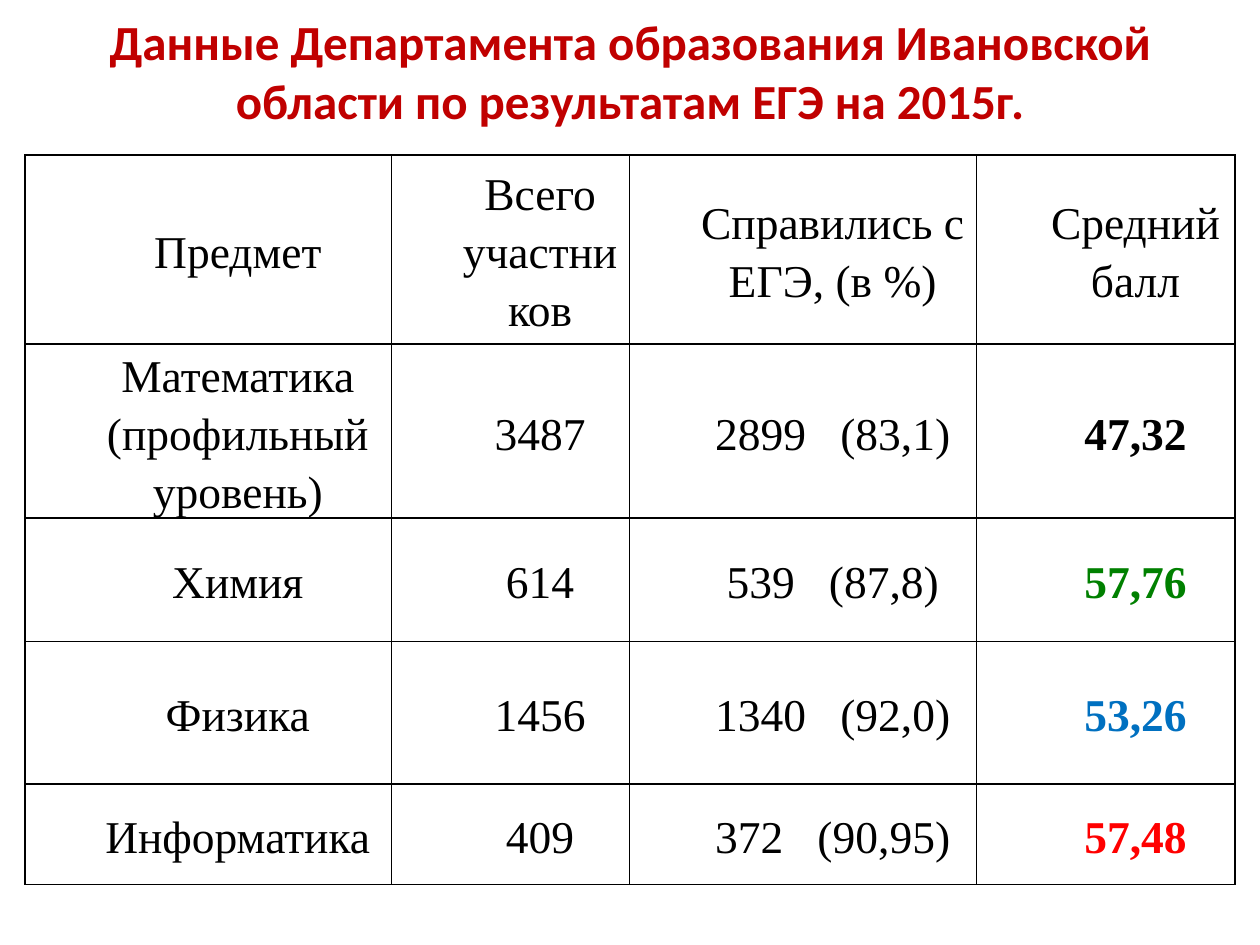
from typing import NamedTuple

from lxml import etree
from pptx import Presentation
from pptx.dml.color import RGBColor
from pptx.enum import text as t
from pptx.oxml import ns
from pptx.util import Pt

BLACK = RGBColor(0x00, 0x00, 0x00)
DARK_RED = RGBColor(0xC0, 0x00, 0x00)
GREEN = RGBColor(0x00, 0x80, 0x00)
BLUE = RGBColor(0x00, 0x70, 0xC0)
RED = RGBColor(0xFF, 0x00, 0x00)

COLUMN_WIDTHS = (209.5, 136, 198.5, 147.5)
HEADER_HEIGHT = 108
HEADINGS = ("Предмет", "Всего участников", "Справились с ЕГЭ, (в %)", "Средний балл")


class Subject(NamedTuple):
    name: str
    participants: str
    passed: str
    score: str
    score_color: RGBColor
    height: float


SUBJECTS = (
    Subject("Математика (профильный уровень)", "3487", "2899   (83,1)", "47,32", BLACK, 99),
    Subject("Химия", "614", "539   (87,8)", "57,76", GREEN, 70.5),
    Subject("Физика", "1456", "1340   (92,0)", "53,26", BLUE, 81.5),
    Subject("Информатика", "409", "372   (90,95)", "57,48", RED, 57.5),
)


def write(frame, wording: str, *, font: str, size: float, color: RGBColor = BLACK,
          bold: bool = False, indent: float = 0, line_spacing: float = 1.0) -> None:
    paragraph = frame.paragraphs[0]
    paragraph.alignment = t.PP_ALIGN.CENTER
    paragraph.line_spacing = line_spacing
    properties = paragraph._p.get_or_add_pPr()
    properties.set("marL", str(Pt(indent)))
    properties.set("indent", "0")
    run = paragraph.add_run()
    run.text = wording
    run.font.name = font
    run.font.size = Pt(size)
    run.font.bold = bold
    run.font.color.rgb = color


def add_borders(cell, color: RGBColor = BLACK, width: float = 1) -> None:
    properties = cell._tc.get_or_add_tcPr()
    for position, side in enumerate(("lnL", "lnR", "lnT", "lnB")):
        line = etree.Element(ns.qn(f"a:{side}"), w=str(Pt(width)))
        fill = etree.SubElement(line, ns.qn("a:solidFill"))
        etree.SubElement(fill, ns.qn("a:srgbClr"), val=str(color))
        properties.insert(position, line)


def fill_cell(cell, wording: str, color: RGBColor = BLACK, bold: bool = False) -> None:
    cell.fill.background()
    cell.vertical_anchor = t.MSO_ANCHOR.MIDDLE
    cell.margin_left = cell.margin_right = Pt(5.4)
    cell.margin_top = cell.margin_bottom = 0
    write(cell.text_frame, wording, font="Times New Roman", size=26, color=color,
          bold=bold, indent=34, line_spacing=1.15)
    add_borders(cell)


def add_title(slide) -> None:
    title = slide.shapes.title
    title.left, title.top, title.width, title.height = Pt(36), Pt(21.6), Pt(648), Pt(90)
    frame = title.text_frame
    frame.word_wrap = True
    frame.auto_size = t.MSO_AUTO_SIZE.NONE
    frame.vertical_anchor = t.MSO_ANCHOR.MIDDLE
    frame.margin_top, frame.margin_bottom = 0, Pt(53)
    write(frame, "Данные Департамента образования Ивановской области по результатам ЕГЭ на 2015г.",
          font="Calibri", size=28, color=DARK_RED, bold=True)


def add_results(slide) -> None:
    heights = (HEADER_HEIGHT, *(subject.height for subject in SUBJECTS))
    results = slide.shapes.add_table(
        len(heights), len(COLUMN_WIDTHS), Pt(14.2), Pt(88.6),
        Pt(sum(COLUMN_WIDTHS)), Pt(sum(heights))).table
    results.first_row = results.horz_banding = False
    for column, width in zip(results.columns, COLUMN_WIDTHS):
        column.width = Pt(width)
    for row, height in zip(results.rows, heights):
        row.height = Pt(height)
    for column, heading in enumerate(HEADINGS):
        fill_cell(results.cell(0, column), heading)
    for row, subject in enumerate(SUBJECTS, start=1):
        for column, wording in enumerate((subject.name, subject.participants, subject.passed)):
            fill_cell(results.cell(row, column), wording)
        fill_cell(results.cell(row, 3), subject.score, subject.score_color, bold=True)


def main() -> None:
    deck = Presentation()
    deck.slide_width, deck.slide_height = Pt(720), Pt(540)
    slide = deck.slides.add_slide(deck.slide_layouts.get_by_name("Title Only"))
    add_title(slide)
    add_results(slide)
    deck.save("out.pptx")


if __name__ == "__main__":
    main()
